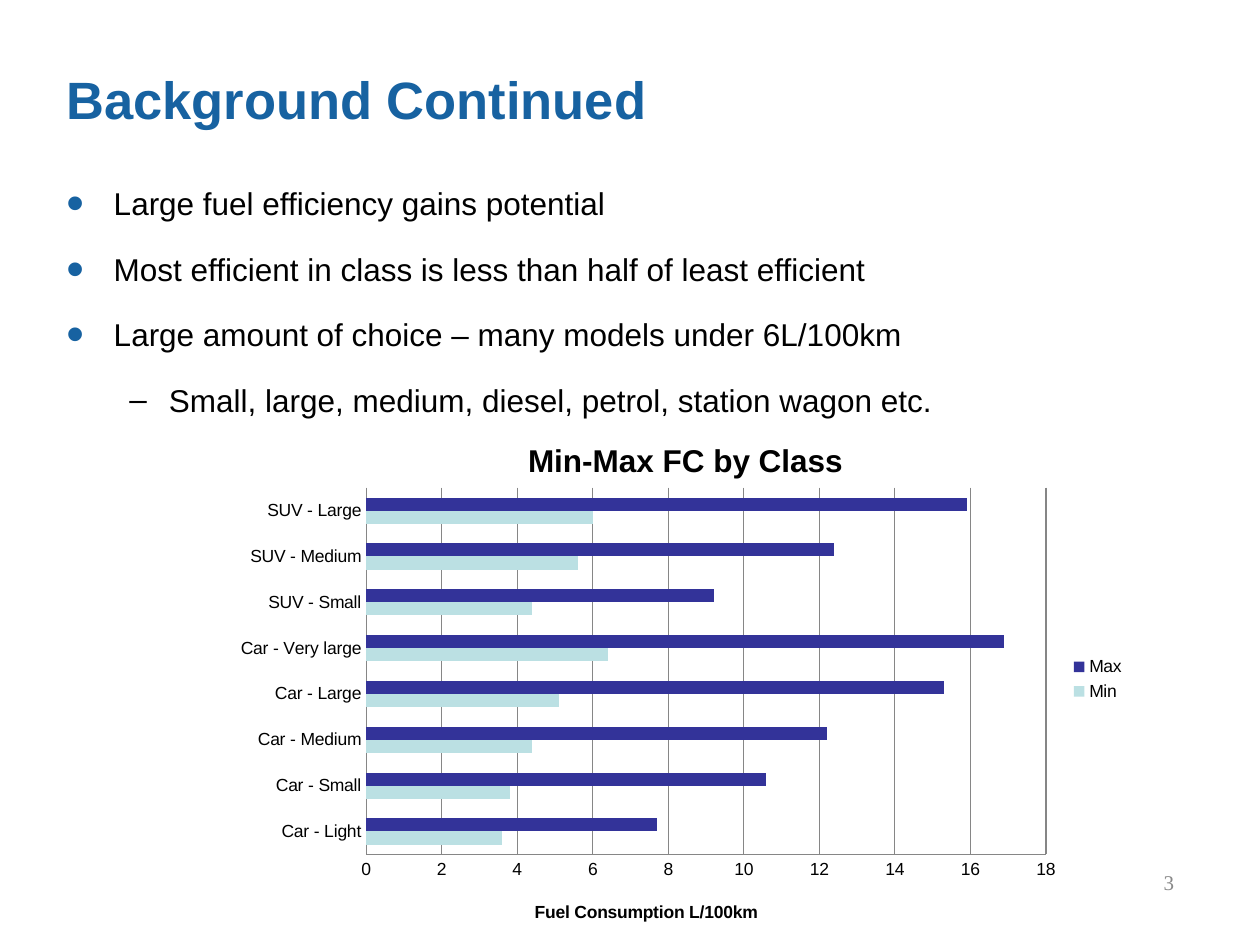
from dataclasses import dataclass
from typing import Optional

from lxml.etree import SubElement
from pptx import Presentation
from pptx.chart.data import CategoryChartData
from pptx.dml.color import RGBColor
from pptx.enum.chart import XL_CHART_TYPE as ChartType
from pptx.enum.chart import XL_LEGEND_POSITION as LegendPosition
from pptx.enum.chart import XL_TICK_MARK as TickMark
from pptx.enum.text import MSO_ANCHOR as Anchor
from pptx.enum.text import PP_ALIGN as Align
from pptx.oxml.ns import qn
from pptx.util import Pt

BLUE = RGBColor(0x17, 0x62, 0xA1)
BLACK = RGBColor(0, 0, 0)
NUMBER_GRAY = RGBColor(0x89, 0x89, 0x89)
LINE_GRAY = RGBColor(0x86, 0x86, 0x86)
MIN_COLOR = RGBColor(0xBB, 0xE0, 0xE3)
MAX_COLOR = RGBColor(0x33, 0x33, 0x99)
FONT = "Arial"


@dataclass(frozen=True)
class Bullet:
    char: str
    left: float
    hanging: float
    level: int = 0
    percent: int = 100
    color: Optional[RGBColor] = None


@dataclass(frozen=True)
class Series:
    name: str
    values: tuple
    color: RGBColor


DOT = Bullet("•", 27, 27, percent=160, color=BLUE)
DASH = Bullet("–", 58.5, 22.5, level=1)

POINTS = (
    ("Large fuel efficiency gains potential", DOT),
    ("Most efficient in class is less than half of least efficient", DOT),
    ("Large amount of choice – many models under 6L/100km", DOT),
    ("Small, large, medium, diesel, petrol, station wagon etc.", DASH),
)
CLASSES = ("Car - Light", "Car - Small", "Car - Medium", "Car - Large",
           "Car - Very large", "SUV - Small", "SUV - Medium", "SUV - Large")
CONSUMPTION = (
    Series("Min", (3.6, 3.8, 4.4, 5.1, 6.4, 4.4, 5.6, 6), MIN_COLOR),
    Series("Max", (7.7, 10.6, 12.2, 15.3, 16.9, 9.2, 12.4, 15.9), MAX_COLOR),
)


def style_font(font, size: float, color: RGBColor = BLACK,
               bold: bool = False, name: str = FONT) -> None:
    font.name, font.size, font.bold = name, Pt(size), bold
    font.color.rgb = color


def add_bullet(para, bullet: Bullet) -> None:
    para.level = bullet.level
    props = para._p.get_or_add_pPr()
    props.set("marL", str(Pt(bullet.left)))
    props.set("indent", str(-Pt(bullet.hanging)))
    if bullet.color is not None:
        color = SubElement(props, qn("a:buClr"))
        SubElement(color, qn("a:srgbClr"), val=str(bullet.color))
    SubElement(props, qn("a:buSzPct"), val=str(bullet.percent * 1000))
    SubElement(props, qn("a:buFont"), typeface=FONT)
    SubElement(props, qn("a:buChar"), char=bullet.char)


def write(para, text: str, *, size: float, color: RGBColor = BLACK,
          bold: bool = False, name: str = FONT, align=Align.LEFT,
          bullet: Optional[Bullet] = None) -> None:
    if bullet is not None:
        add_bullet(para, bullet)
    para.alignment = align
    span = para.add_run()
    span.text = text
    style_font(span.font, size, color, bold, name)


def add_box(page, left: float, top: float, width: float, height: float,
            margins: tuple = (0, 0), anchor=Anchor.TOP):
    box = page.shapes.add_textbox(Pt(left), Pt(top), Pt(width), Pt(height))
    frame = box.text_frame
    frame.word_wrap = True
    frame.vertical_anchor = anchor
    frame.margin_left = frame.margin_right = Pt(margins[0])
    frame.margin_top = frame.margin_bottom = Pt(margins[1])
    return frame


def add_points(page) -> None:
    frame = add_box(page, 38, 94.5, 645, 339)
    for index, (text, bullet) in enumerate(POINTS):
        para = frame.add_paragraph() if index else frame.paragraphs[0]
        write(para, text, size=18, bullet=bullet)
        para.line_spacing = 1.5
        if index:
            para.space_before = Pt(5)


def place(element, inner: bool = False, **fractions: float) -> None:
    for old in element.findall(qn("c:layout")):
        element.remove(old)
    layout = SubElement(element, qn("c:layout"))
    manual = SubElement(layout, qn("c:manualLayout"))
    if inner:
        SubElement(manual, qn("c:layoutTarget"), val="inner")
    for side in ("x", "y"):
        SubElement(manual, qn(f"c:{side}Mode"), val="edge")
    for side, fraction in fractions.items():
        SubElement(manual, qn(f"c:{side}"), val=str(fraction))
    text = element.find(qn("c:tx"))
    element.insert(0 if text is None else element.index(text) + 1, layout)


def add_title(owner, text: str, size: float, x: float, y: float) -> None:
    title = owner.chart_title if hasattr(owner, "chart_title") else owner.axis_title
    write(title.text_frame.paragraphs[0], text, size=size, bold=True,
          align=Align.CENTER)
    place(title._element, x=x, y=y)


def style_line(line) -> None:
    line.color.rgb = LINE_GRAY
    line.width = Pt(0.75)


def add_consumption_chart(page) -> None:
    data = CategoryChartData()
    data.categories = CLASSES
    for series in CONSUMPTION:
        data.add_series(series.name, series.values)
    chart = page.shapes.add_chart(ChartType.BAR_CLUSTERED, Pt(125.3), Pt(236.2),
                                  Pt(524.9), Pt(303.8), data).chart
    style_font(chart.font, 10)
    add_title(chart, "Min-Max FC by Class", 18, 0.33, 0.04)

    for axis in (chart.category_axis, chart.value_axis):
        axis.major_tick_mark = axis.minor_tick_mark = TickMark.NONE
        style_line(axis.format.line)
    values = chart.value_axis
    values.minimum_scale, values.maximum_scale, values.major_unit = 0, 18, 2
    values.tick_labels.number_format = "General"
    values.tick_labels.number_format_is_linked = False
    style_line(values.major_gridlines.format.line)
    add_title(values, "Fuel Consumption L/100km", 10, 0.34, 0.91)

    plot = chart.plots[0]
    plot.gap_width, plot.overlap = 150, 0
    plot.vary_by_categories = False
    for bars, series in zip(plot.series, CONSUMPTION):
        bars.format.fill.solid()
        bars.format.fill.fore_color.rgb = series.color
    place(chart._chartSpace.chart.plotArea, inner=True,
          x=0.16, y=0.14, w=0.74, h=0.69)

    chart.has_legend = True
    chart.legend.position = LegendPosition.RIGHT
    chart.legend.include_in_layout = False
    style_font(chart.legend.font, 10)


def main() -> None:
    deck = Presentation()
    deck.slide_width, deck.slide_height = Pt(720), Pt(540)
    page = deck.slides.add_slide(deck.slide_layouts[6])
    add_points(page)
    heading = add_box(page, 38, 38, 623, 34)
    write(heading.paragraphs[0], "Background Continued",
          size=30, color=BLUE, bold=True)
    number = add_box(page, 510, 486, 168, 29, margins=(7.2, 3.6),
                     anchor=Anchor.BOTTOM)
    write(number.paragraphs[0], "3", size=12, color=NUMBER_GRAY,
          name="Times New Roman", align=Align.RIGHT)
    add_consumption_chart(page)
    deck.save("out.pptx")


if __name__ == "__main__":
    main()
